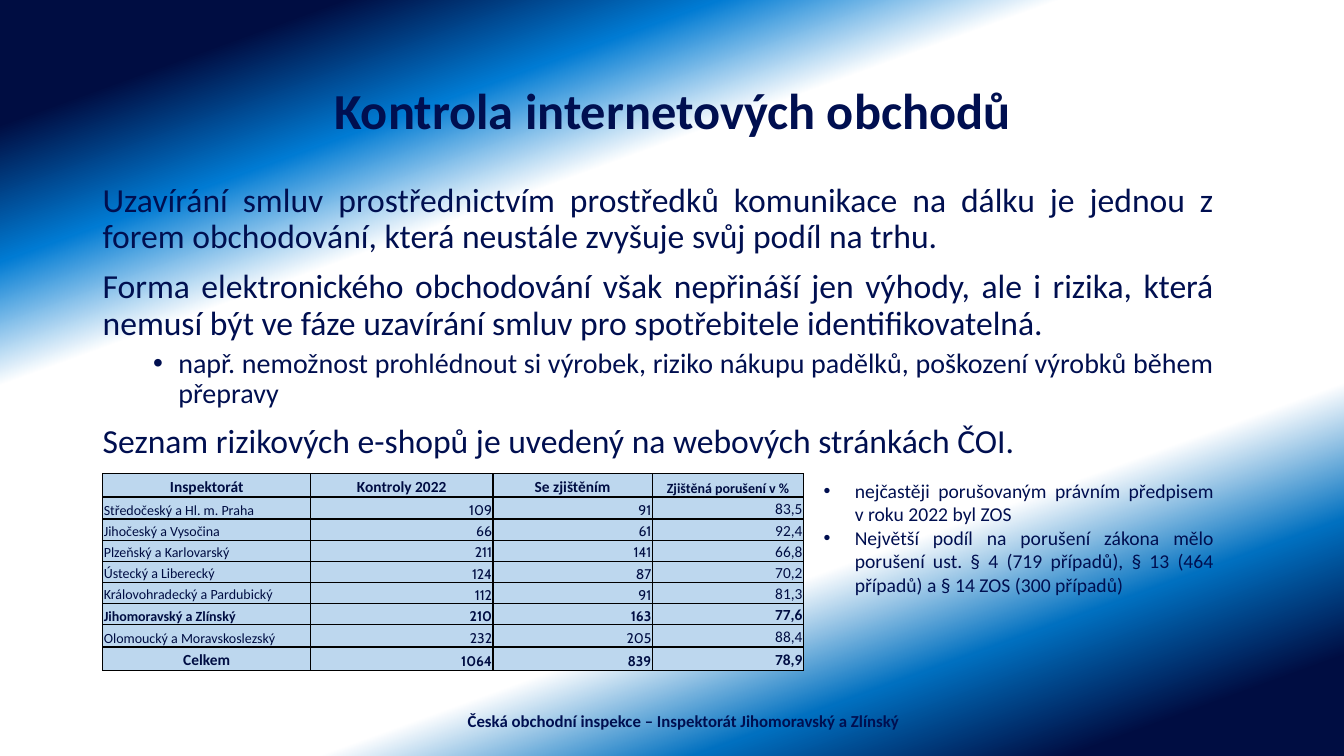
from lxml import etree
from pptx import Presentation
from pptx import util as u
from pptx.dml.color import RGBColor
from pptx.enum import text
from pptx.oxml import parse_xml
from pptx.oxml.ns import nsdecls, qn

NAVY, INK, PALE, BLACK = "000F50", "000D42", "BDD7EE", "000000"
LEFT, CENTER, RIGHT, JUSTIFY = (
    text.PP_ALIGN.LEFT, text.PP_ALIGN.CENTER, text.PP_ALIGN.RIGHT, text.PP_ALIGN.JUSTIFY)
MIDDLE, BOTTOM = text.MSO_ANCHOR.MIDDLE, text.MSO_ANCHOR.BOTTOM


def color(hex_code):
    return RGBColor.from_string(hex_code)


class SlideBuilder:
    font = "Calibri"

    def __init__(self, deck):
        self.slide = deck.slides.add_slide(deck.slide_layouts[5])

    def background(self, stops, angle):
        gradient = "".join(
            f'<a:gs pos="{pos * 1000}"><a:srgbClr val="{code}">'
            f'<a:alpha val="{alpha * 1000}"/></a:srgbClr></a:gs>'
            for pos, code, alpha in stops)
        fill = parse_xml(
            f'<a:gradFill {nsdecls("a")} rotWithShape="1"><a:gsLst>{gradient}</a:gsLst>'
            f'<a:lin ang="{angle * 60000}" scaled="0"/></a:gradFill>')
        self.slide.background.fill.solid()
        properties = self.slide.element.find(".//" + qn("p:bgPr"))
        properties.replace(properties[0], fill)

    def format(self, paragraph, size, align, bold=False, ink=NAVY, font=None):
        paragraph.alignment = align
        style = paragraph.font
        style.name, style.size, style.bold = font or self.font, u.Pt(size), bold
        style.color.rgb = color(ink)

    def place(self, shape, left, top, width, height):
        shape.left, shape.top = u.Inches(left), u.Inches(top)
        shape.width, shape.height = u.Inches(width), u.Inches(height)

    def title(self, wording, *box):
        heading = self.slide.shapes.title
        self.place(heading, *box)
        heading.text_frame.text = wording
        heading.text_frame.vertical_anchor = MIDDLE
        paragraph = heading.text_frame.paragraphs[0]
        paragraph.line_spacing = 0.9
        self.format(paragraph, 36, CENTER, bold=True)

    def text_frame(self, *box, anchor=text.MSO_ANCHOR.TOP):
        frame = self.slide.shapes.add_textbox(*map(u.Inches, box)).text_frame
        frame.word_wrap = True
        frame.vertical_anchor = anchor
        return frame

    def paragraph(self, frame, wording, size, align=JUSTIFY, bold=False,
                  before=0, spacing=1.0, indent=None, level=0):
        first = frame.paragraphs[0]
        paragraph = frame.add_paragraph() if first.text else first
        paragraph.text = wording
        paragraph.level = level
        paragraph.space_before = u.Pt(before)
        paragraph.line_spacing = spacing
        if indent:
            margin, hanging = indent
            properties = paragraph._p.get_or_add_pPr()
            properties.set("marL", str(u.Inches(margin)))
            properties.set("indent", str(-u.Inches(hanging)))
            etree.SubElement(properties, qn("a:buFont")).set("typeface", "Arial")
            etree.SubElement(properties, qn("a:buChar")).set("char", "•")
        self.format(paragraph, size, align, bold)

    def table(self, left, top, widths, heights):
        frame = self.slide.shapes.add_table(
            len(heights), len(widths), u.Inches(left), u.Inches(top),
            u.Inches(sum(widths)), u.Inches(sum(heights)))
        grid = frame.table
        grid.first_row = grid.horz_banding = False
        for column, width in zip(grid.columns, widths):
            column.width = u.Inches(width)
        for row, height in zip(grid.rows, heights):
            row.height = u.Inches(height)
        return grid

    def cell(self, cell, wording, size, align, bold, font=None):
        cell.text = wording
        cell.vertical_anchor = BOTTOM
        cell.margin_left = cell.margin_right = cell.margin_top = u.Inches(0.01)
        cell.margin_bottom = 0
        self.format(cell.text_frame.paragraphs[0], size, align, bold, INK, font)
        properties = cell._tc.get_or_add_tcPr()
        for side in ("lnL", "lnR", "lnT", "lnB"):
            properties.append(parse_xml(
                f'<a:{side} {nsdecls("a")} w="{u.Pt(1)}"><a:solidFill>'
                f'<a:srgbClr val="{BLACK}"/></a:solidFill></a:{side}>'))
        cell.fill.solid()
        cell.fill.fore_color.rgb = color(PALE)


def main():
    deck = Presentation()
    deck.slide_width, deck.slide_height = u.Inches(13.33), u.Inches(7.5)
    page = SlideBuilder(deck)
    page.background([
        (10, INK, 100), (21, "007BD3", 93), (31, "FFFFFF", 100),
        (70, "FFFFFF", 100), (81, "0070C0", 100), (92, INK, 100)], 70)

    # Title and main text
    page.title("Kontrola internetových obchodů", 0.92, 0.4, 11.5, 1.45)
    body = page.text_frame(0.92, 1.77, 11.22, 4.98)
    main_point = dict(size=24, before=10, spacing=0.9)
    page.paragraph(body, "Uzavírání smluv prostřednictvím prostředků komunikace na dálku je "
                   "jednou z forem obchodování, která neustále zvyšuje svůj podíl na trhu.",
                   **main_point)
    page.paragraph(body, "Forma elektronického obchodování však nepřináší jen výhody, ale i "
                   "rizika, která nemusí být ve fáze uzavírání smluv pro spotřebitele "
                   "identifikovatelná.", **main_point)
    page.paragraph(body, "např. nemožnost prohlédnout si výrobek, riziko nákupu padělků, "
                   "poškození výrobků během přepravy", 20, before=5, spacing=0.9,
                   indent=(0.75, 0.25), level=1)
    page.paragraph(body, "Seznam rizikových e-shopů je uvedený na webových stránkách ČOI.",
                   **main_point)

    # Footer
    footer = page.text_frame(4.42, 6.95, 4.72, 0.4, anchor=MIDDLE)
    page.paragraph(footer, "Česká obchodní inspekce – Inspektorát Jihomoravský a Zlínský",
                   12, CENTER, bold=True)

    # Inspection results by inspectorate
    results = [
        ("Inspektorát", "Kontroly 2022", "Se zjištěním", "Zjištěná porušení v %"),
        ("Středočeský a Hl. m. Praha", "109", "91", "83,5"),
        ("Jihočeský a Vysočina", "66", "61", "92,4"),
        ("Plzeňský a Karlovarský", "211", "141", "66,8"),
        ("Ústecký a Liberecký", "124", "87", "70,2"),
        ("Královohradecký a Pardubický", "112", "91", "81,3"),
        ("Jihomoravský a Zlínský", "210", "163", "77,6"),
        ("Olomoucký a Moravskoslezský", "232", "205", "88,4"),
        ("Celkem", "1064", "839", "78,9")]
    header, home, total = 0, 6, len(results) - 1
    heights = [0.23, 0.22] + [0.21] * 5 + [0.22, 0.23]
    grid = page.table(1.02, 4.7, [2.06, 1.81, 1.58, 1.5], heights)
    for r, row in enumerate(results):
        for c, wording in enumerate(row):
            share, count = c == 3, r != header and c in (1, 2)
            if r == header:
                size, align = 10 if share else 11, CENTER
            elif c == 0:
                size, align = (11, CENTER) if r == total else (10, LEFT)
            else:
                size, align = 11 if share else 10, RIGHT
            page.cell(grid.cell(r, c), wording, size, align,
                      r in (header, home, total), "Cabin" if count else None)

    # Findings beside the table
    findings = page.text_frame(8.07, 4.7, 4.07, 1.28)
    for finding in (
            "nejčastěji porušovaným právním předpisem v roku 2022 byl ZOS",
            "Největší podíl na porušení zákona mělo porušení ust. § 4 (719 případů), "
            "§ 13 (464 případů) a § 14 ZOS (300 případů)"):
        page.paragraph(findings, finding, 14, indent=(0.31, 0.31))

    deck.save("out.pptx")


if __name__ == "__main__":
    main()
